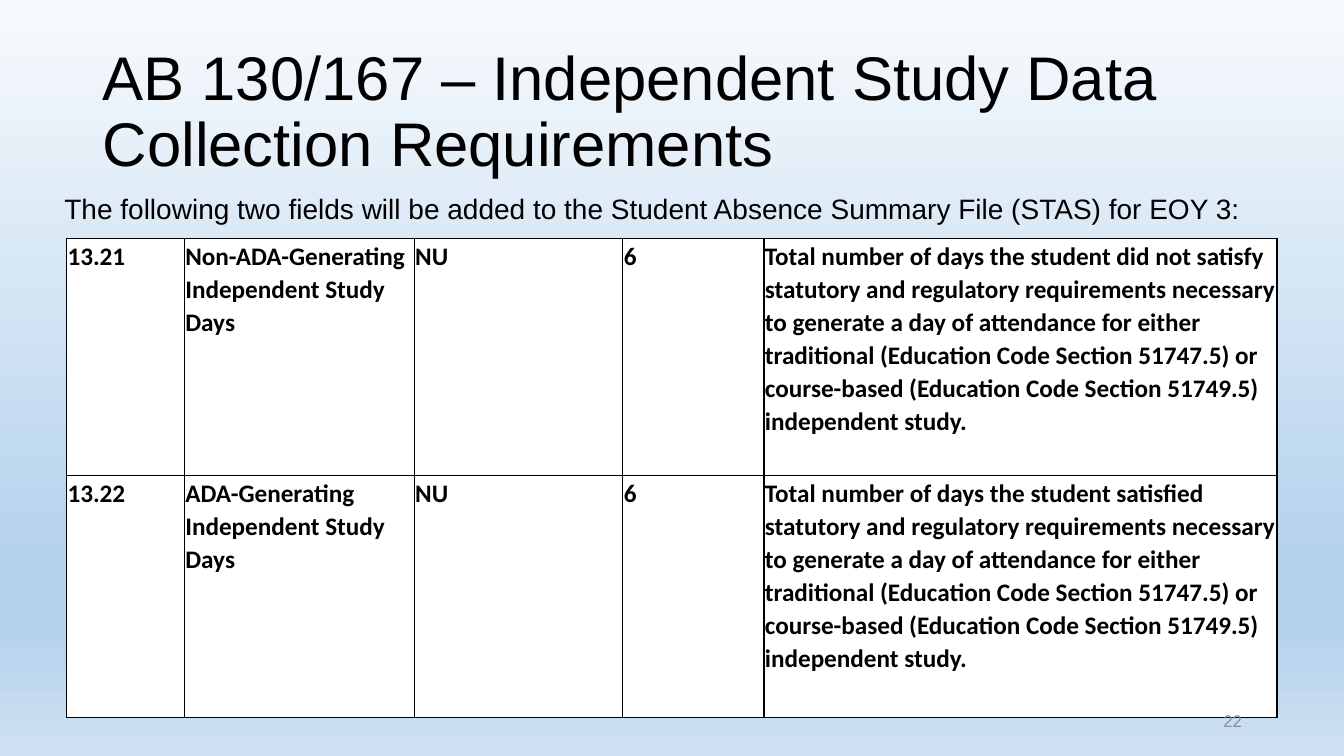
"""Build the slide on independent study data collection requirements."""
from copy import deepcopy

from lxml import etree
from pptx import Presentation
from pptx import util as u
from pptx.dml.color import RGBColor
from pptx.enum import text
from pptx.oxml.ns import qn

TITLE = "AB 130/167 – Independent Study Data Collection Requirements"
INTRO = "The following two fields will be added to the Student Absence Summary File (STAS) for EOY 3:"
PAGE_NUMBER = "22"
RULE = (
    "statutory and regulatory requirements necessary to generate a day of attendance "
    "for either traditional (Education Code Section 51747.5) or course-based "
    "(Education Code Section 51749.5) independent study."
)
FIELDS = [
    ("13.21", "Non-ADA-Generating Independent Study Days", "NU", "6",
     f"Total number of days the student did not satisfy {RULE}"),
    ("13.22", "ADA-Generating Independent Study Days", "NU", "6",
     f"Total number of days the student satisfied {RULE}"),
]

THEME = {
    "heading_font": "Arial", "table_font": "Calibri",
    "title": 44, "intro": 20, "table": 18, "number": 12,
    "ink": "000000", "muted": "8C8C8C", "paper": "FFFFFF",
    "background": [(0, "F7FAFD"), (0.74, "B5D2EC"), (0.83, "B5D2EC"), (1, "CEE1F2")],
}

SLIDE_SIZE = (960, 540)
TITLE_BOX = (66.24, 28.8, 828, 104.4)
INTRO_BOX = (38.9, 133.2, 866, 31.5)
NUMBER_BOX = (678.24, 500.4, 216, 28.8)
TABLE_ORIGIN = (47.5, 170.5)
COLUMN_WIDTHS = (84.2, 164.2, 149, 100.8, 366.5)
ROW_HEIGHTS = (169.2, 172.8)
CELL_INSET = 0.72
BORDER_WIDTH = 1


def points(values):
    return [u.Pt(value) for value in values]


def add_run(paragraph, wording, font, size, color, bold=False):
    run = paragraph.add_run()
    run.text = wording
    run.font.name = font
    run.font.size = u.Pt(size)
    run.font.bold = bold
    run.font.color.rgb = RGBColor.from_string(color)


def add_text(slide, box, wording, size, color, anchor, align=text.PP_ALIGN.LEFT, spacing=1.0):
    frame = slide.shapes.add_textbox(*points(box)).text_frame
    frame.word_wrap = True
    frame.vertical_anchor = anchor
    paragraph = frame.paragraphs[0]
    paragraph.alignment = align
    paragraph.line_spacing = spacing
    add_run(paragraph, wording, THEME["heading_font"], size, color)


def paint_background(slide):
    fill = slide.background.fill
    fill.gradient()
    fill.gradient_angle = 270
    stop_list = slide.element.find(".//" + qn("a:gsLst"))
    while len(stop_list) < len(THEME["background"]):
        stop_list.append(deepcopy(stop_list[0]))
    for stop, (position, color) in zip(fill.gradient_stops, THEME["background"]):
        stop.position = position
        stop.color.rgb = RGBColor.from_string(color)


def add_borders(cell):
    properties = cell._tc.get_or_add_tcPr()
    for index, side in enumerate(("a:lnL", "a:lnR", "a:lnT", "a:lnB")):
        line = etree.Element(qn(side), w=str(u.Pt(BORDER_WIDTH)))
        solid = etree.SubElement(line, qn("a:solidFill"))
        etree.SubElement(solid, qn("a:srgbClr"), val=THEME["ink"])
        properties.insert(index, line)


def fill_cell(cell, wording):
    cell.fill.solid()
    cell.fill.fore_color.rgb = RGBColor.from_string(THEME["paper"])
    cell.margin_left = cell.margin_right = u.Pt(CELL_INSET)
    cell.margin_top = cell.margin_bottom = u.Pt(CELL_INSET)
    add_borders(cell)
    paragraph = cell.text_frame.paragraphs[0]
    paragraph.line_spacing = 1.07
    add_run(paragraph, wording, THEME["table_font"], THEME["table"], THEME["ink"], bold=True)


def add_fields_table(slide):
    size = (sum(COLUMN_WIDTHS), sum(ROW_HEIGHTS))
    table = slide.shapes.add_table(
        len(FIELDS), len(COLUMN_WIDTHS), *points(TABLE_ORIGIN + size)).table
    table.first_row = table.horz_banding = False
    for column, width in zip(table.columns, points(COLUMN_WIDTHS)):
        column.width = width
    for row, height, field in zip(table.rows, points(ROW_HEIGHTS), FIELDS):
        row.height = height
        for cell, wording in zip(row.cells, field):
            fill_cell(cell, wording)


def main():
    presentation = Presentation()
    presentation.slide_width, presentation.slide_height = points(SLIDE_SIZE)
    slide = presentation.slides.add_slide(presentation.slide_layouts[6])
    paint_background(slide)
    middle, top = text.MSO_ANCHOR.MIDDLE, text.MSO_ANCHOR.TOP
    add_text(slide, TITLE_BOX, TITLE, THEME["title"], THEME["ink"], middle, spacing=0.9)
    add_fields_table(slide)
    add_text(slide, NUMBER_BOX, PAGE_NUMBER, THEME["number"], THEME["muted"], middle,
             align=text.PP_ALIGN.RIGHT)
    add_text(slide, INTRO_BOX, INTRO, THEME["intro"], THEME["ink"], top)
    presentation.save("out.pptx")


if __name__ == "__main__":
    main()
